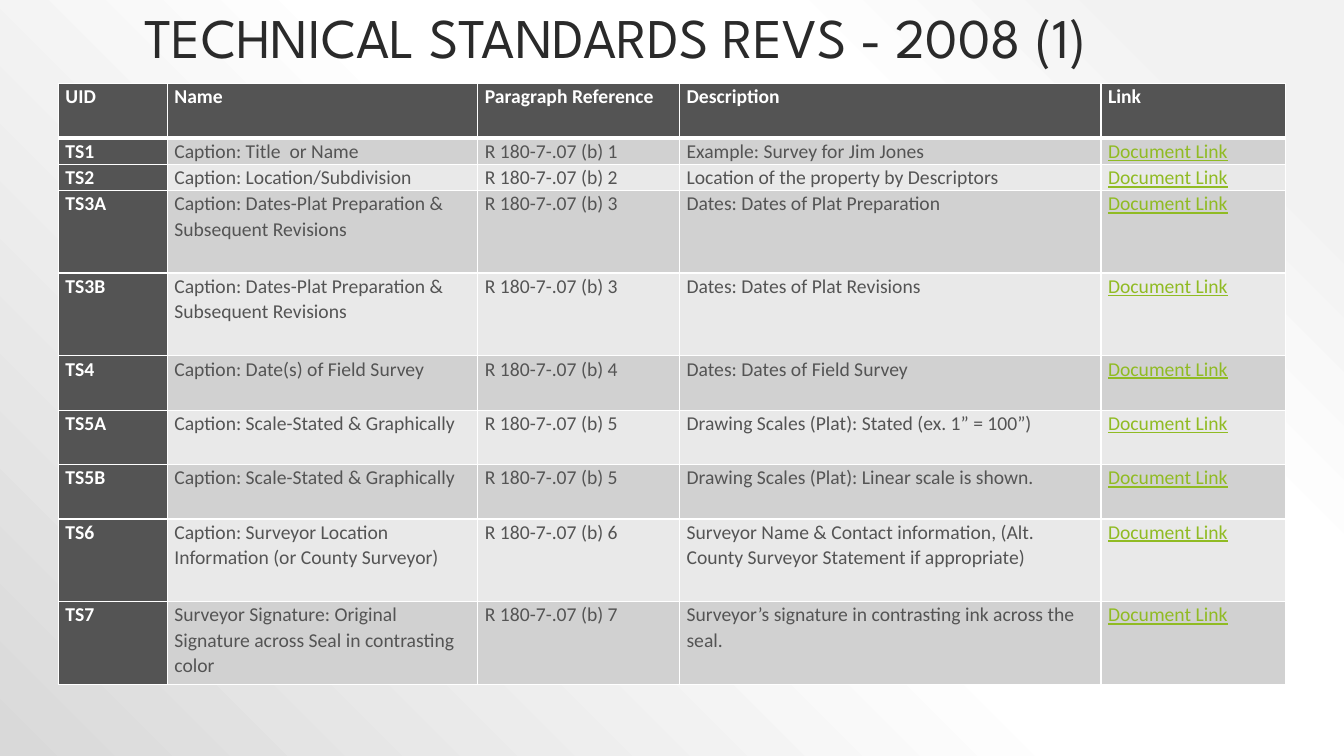
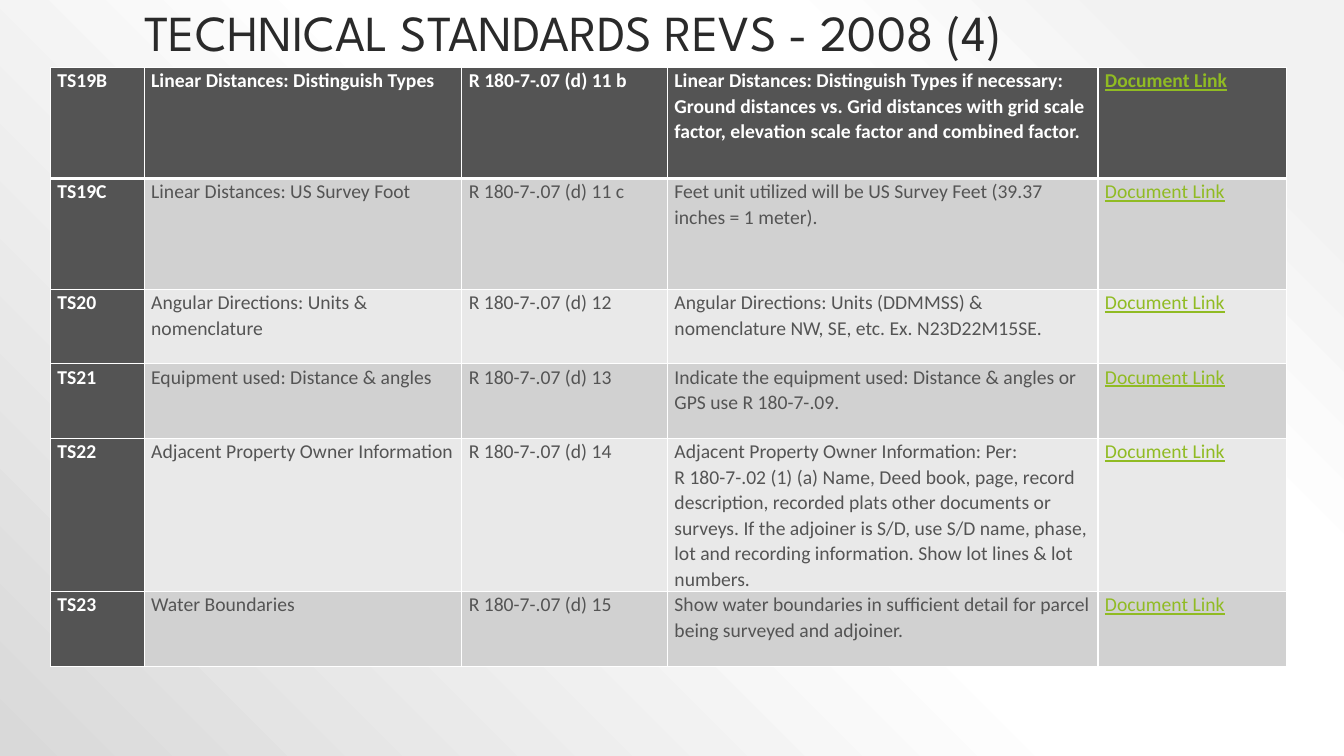
from pptx import Presentation
from pptx.dml.color import RGBColor
from pptx.enum.text import MSO_ANCHOR as Anchor, MSO_AUTO_SIZE as AutoSize, PP_ALIGN as Align
from pptx.oxml import parse_xml
from pptx.oxml.ns import nsdecls, qn
from pptx.util import Inches, Pt

WHITE = RGBColor(0xFF, 0xFF, 0xFF)
INK = RGBColor(0x2A, 0x2A, 0x2A)
CHARCOAL = RGBColor(0x54, 0x54, 0x54)
DARK_BAND = RGBColor(0xD1, 0xD1, 0xD1)
LIGHT_BAND = RGBColor(0xE9, 0xE9, 0xE9)
LINK_GREEN = RGBColor(0x90, 0xBB, 0x23)
MIST = RGBColor(0xF2, 0xF2, 0xF2)
SILVER = RGBColor(0xD9, 0xD9, 0xD9)
BACKDROP = [(10, MIST), (28, WHITE), (48, WHITE), (100, SILVER)]

TITLE_FONT = "League Spartan"
TABLE_FONT = "Calibri"
LINK = "Document Link"

FIRST_ROWS = [
    ("UID", "Name", "Paragraph Reference", "Description", "Link"),
    ("TS1", "Caption: Title  or Name", "R 180-7-.07 (b) 1", "Example: Survey for Jim Jones", LINK),
    ("TS2", "Caption: Location/Subdivision", "R 180-7-.07 (b) 2",
     "Location of the property by Descriptors", LINK),
    ("TS3A", "Caption: Dates-Plat Preparation & Subsequent Revisions", "R 180-7-.07 (b) 3",
     "Dates: Dates of Plat Preparation", LINK),
    ("TS3B", "Caption: Dates-Plat Preparation & Subsequent Revisions", "R 180-7-.07 (b) 3",
     "Dates: Dates of Plat Revisions", LINK),
    ("TS4", "Caption: Date(s) of Field Survey", "R 180-7-.07 (b) 4",
     "Dates: Dates of Field Survey", LINK),
    ("TS5A", "Caption: Scale-Stated & Graphically", "R 180-7-.07 (b) 5",
     "Drawing Scales (Plat): Stated (ex. 1” = 100”)", LINK),
    ("TS5B", "Caption: Scale-Stated & Graphically", "R 180-7-.07 (b) 5",
     "Drawing Scales (Plat): Linear scale is shown.", LINK),
    ("TS6", "Caption: Surveyor Location Information (or County Surveyor)", "R 180-7-.07 (b) 6",
     "Surveyor Name & Contact information, (Alt. County Surveyor Statement if appropriate)", LINK),
    ("TS7", "Surveyor Signature: Original Signature across Seal in contrasting color",
     "R 180-7-.07 (b) 7", "Surveyor’s signature in contrasting ink across the seal.", LINK),
]

FOURTH_ROWS = [
    ("TS19B", "Linear Distances: Distinguish Types", "R 180-7-.07 (d) 11 b",
     "Linear Distances: Distinguish Types if necessary: Ground distances vs. Grid distances "
     "with grid scale factor, elevation scale factor and combined factor.", LINK),
    ("TS19C", "Linear Distances: US Survey Foot", "R 180-7-.07 (d) 11 c",
     "Feet unit utilized will be US Survey Feet (39.37 inches = 1 meter).", LINK),
    ("TS20", "Angular Directions: Units & nomenclature", "R 180-7-.07 (d) 12",
     "Angular Directions: Units (DDMMSS) & nomenclature NW, SE, etc. Ex. N23D22M15SE.", LINK),
    ("TS21", "Equipment used: Distance & angles", "R 180-7-.07 (d) 13",
     "Indicate the equipment used: Distance & angles or GPS use R 180-7-.09.", LINK),
    ("TS22", "Adjacent Property Owner Information", "R 180-7-.07 (d) 14",
     "Adjacent Property Owner Information: Per:\n"
     "R 180-7-.02 (1) (a) Name, Deed book, page, record description, recorded plats other "
     "documents or surveys. If the adjoiner is S/D, use S/D name, phase, lot and recording "
     "information. Show lot lines & lot numbers.", LINK),
    ("TS23", "Water Boundaries", "R 180-7-.07 (d) 15",
     "Show water boundaries in sufficient detail for parcel being surveyed and adjoiner.", LINK),
]


class StandardsDeck:
    def __init__(self):
        self.deck = Presentation()
        self.deck.slide_width = Inches(13.33)
        self.deck.slide_height = Inches(7.5)
        self.page = None
        self.paint_backdrop()

    def paint_backdrop(self):
        master = self.deck.slide_master
        master.background.fill.solid()
        properties = master.element.find(".//" + qn("p:bgPr"))
        stops = "".join(
            f'<a:gs pos="{place * 1000}"><a:srgbClr val="{color}"/></a:gs>'
            for place, color in BACKDROP
        )
        gradient = parse_xml(
            f'<a:gradFill {nsdecls("a")} rotWithShape="1"><a:gsLst>{stops}</a:gsLst>'
            '<a:path path="circle"><a:fillToRect l="100000" b="100000"/></a:path></a:gradFill>'
        )
        properties.replace(properties.find(qn("a:solidFill")), gradient)

    def add_page(self):
        self.page = self.deck.slides.add_slide(self.deck.slide_layouts[5])

    def style_text(self, frame, font, size, color, spacing, bold=False, underline=False):
        for para in frame.paragraphs:
            para.alignment = Align.LEFT
            para.line_spacing = spacing
            for span in para.runs:
                span.font.name = font
                span.font.size = Pt(size)
                span.font.color.rgb = color
                span.font.bold = bold
                span.font.underline = underline

    def add_title(self, text, height, size):
        title = self.page.shapes.title
        title.left, title.top = Inches(1.33), Inches(0)
        title.width, title.height = Inches(10.67), Inches(height)
        frame = title.text_frame
        frame.text = text
        frame.auto_size = AutoSize.NONE
        frame.vertical_anchor = Anchor.BOTTOM
        self.style_text(frame, TITLE_FONT, size, INK, 0.9)

    def add_table(self, left, top, widths, heights, rows):
        table = self.page.shapes.add_table(
            len(rows), len(widths), Inches(left), Inches(top),
            Inches(sum(widths)), Inches(sum(heights)),
        ).table
        for column, width in zip(table.columns, widths):
            column.width = Inches(width)
        for row, height in zip(table.rows, heights):
            row.height = Inches(height)
        for row_index, texts in enumerate(rows):
            for column_index, text in enumerate(texts):
                self.fill_cell(table.cell(row_index, column_index), text, row_index, column_index)

    def fill_cell(self, cell, text, row_index, column_index):
        heading = row_index == 0 or column_index == 0
        cell.margin_left = cell.margin_right = Inches(0.07)
        cell.margin_top = cell.margin_bottom = 0
        self.add_borders(cell, row_index)
        cell.fill.solid()
        band = DARK_BAND if row_index % 2 else LIGHT_BAND
        cell.fill.fore_color.rgb = CHARCOAL if heading else band
        cell.text_frame.text = text
        linked = text == LINK
        color = LINK_GREEN if linked else WHITE if heading else CHARCOAL
        self.style_text(cell.text_frame, TABLE_FONT, 14, color, 1.07, heading, linked)

    def add_borders(self, cell, row_index):
        properties = cell._tc.get_or_add_tcPr()
        widths = {"L": 1, "R": 1, "T": 3 if row_index == 1 else 1, "B": 3 if row_index == 0 else 1}
        for side, width in widths.items():
            properties.append(parse_xml(
                f'<a:ln{side} {nsdecls("a")} w="{Pt(width)}"><a:solidFill>'
                f'<a:srgbClr val="{WHITE}"/></a:solidFill></a:ln{side}>'
            ))

    def save(self):
        self.deck.save("out.pptx")


def main():
    standards = StandardsDeck()

    standards.add_page()
    standards.add_title("TECHNICAL STANDARDS REVS - 2008 (1)", 0.75, 40)
    standards.add_table(
        0.58, 0.83, [1.08, 3.08, 2, 4.18, 1.83],
        [0.54] + [0.26] * 2 + [0.82] * 2 + [0.54] * 3 + [0.82] * 2, FIRST_ROWS,
    )

    standards.add_page()
    standards.add_title("TECHNICAL STANDARDS REVS - 2008 (4)", 0.67, 36)
    standards.add_table(
        0.5, 0.67, [0.93, 3.15, 2.04, 4.27, 1.87], [1.1] * 2 + [0.74] * 4, FOURTH_ROWS,
    )

    standards.save()


if __name__ == "__main__":
    main()
